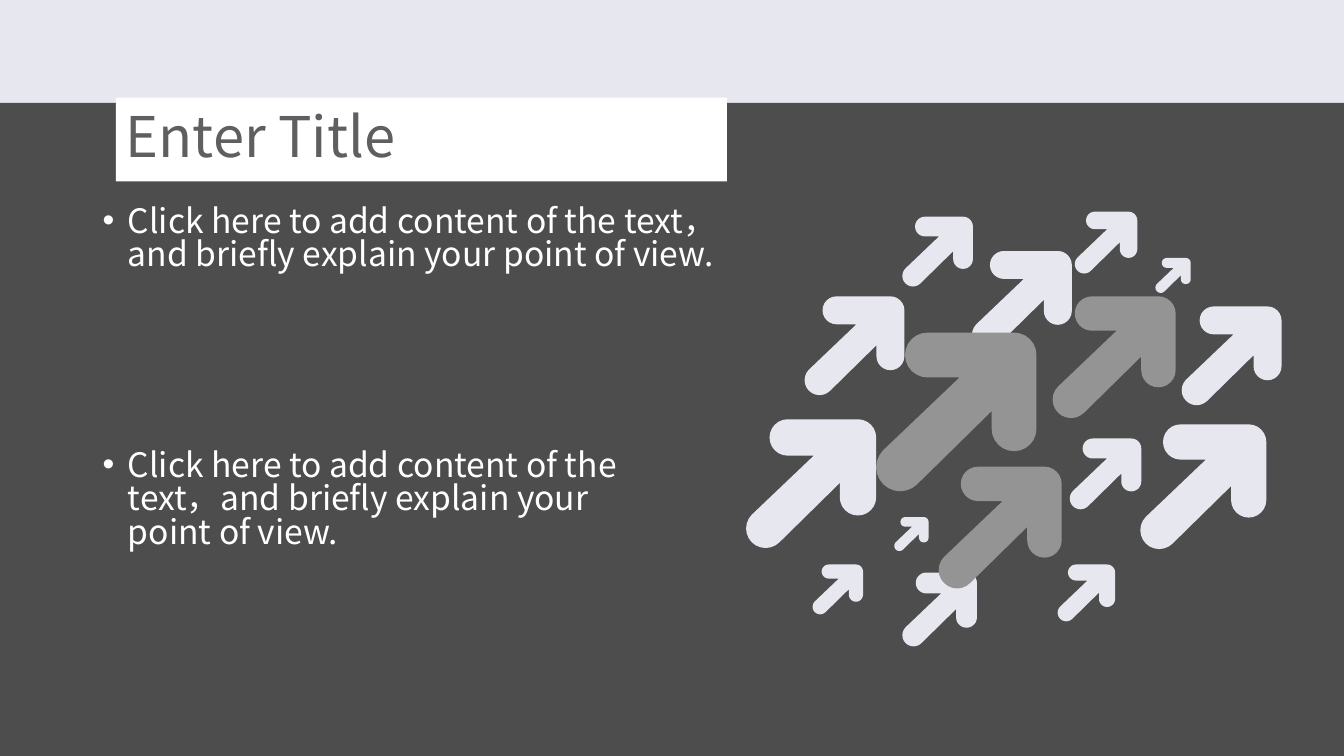
"""Build a title slide with two bullet texts and a cluster of rising arrows."""
from math import cos, radians, sin

from lxml import etree
from pptx import Presentation
from pptx.dml.color import RGBColor
from pptx.enum.shapes import MSO_SHAPE
from pptx.enum.text import MSO_ANCHOR, PP_ALIGN
from pptx.oxml.ns import qn
from pptx.util import Inches, Pt

RECTANGLE = MSO_SHAPE.RECTANGLE
LEFT = PP_ALIGN.LEFT
TOP, MIDDLE = MSO_ANCHOR.TOP, MSO_ANCHOR.MIDDLE

THEME = {
    "font": "Noto Sans CJK JP",
    "pale": "E7E7EF",
    "dark": "4D4D4D",
    "grey": "949494",
    "white": "FFFFFF",
    "title": "5F5F5F",
    "title_size": 40,
    "body_size": 24,
}

SLIDE_SIZE = (13.33, 7.5)
PANEL_BOX = (0, 1.02, 13.33, 6.48)
TITLE = ("Enter Title", (1.15, 0.97, 6.06, 0.83))
BODY_TEXT = "Click here to add content of the text，and briefly explain your point of view."
BODY_BOXES = [(0.92, 2, 6.54, 2.23), (0.92, 4.42, 5.91, 2.17)]

# left, top, width, colour
ARROWS = [
    (8.95, 5.68, 0.74, "pale"),
    (9.64, 2.49, 0.99, "pale"),
    (8.69, 3.3, 1.59, "grey"),
    (10.44, 2.94, 1.22, "grey"),
    (7.98, 2.94, 0.99, "pale"),
    (9.31, 4.63, 1.22, "grey"),
    (7.4, 4.16, 1.29, "pale"),
    (10.61, 4.35, 0.71, "pale"),
    (11.72, 3.04, 0.99, "pale"),
    (10.66, 2.1, 0.62, "pale"),
    (11.46, 2.56, 0.35, "pale"),
    (8.87, 5.13, 0.34, "pale"),
    (8.06, 5.6, 0.5, "pale"),
    (10.49, 5.6, 0.57, "pale"),
    (8.95, 2.15, 0.7, "pale"),
    (11.31, 4.21, 1.25, "pale"),
]


def arc(center_x, center_y, radius, start, end, step=15):
    """Return points along a circular arc, angles in degrees."""
    return [
        (center_x + radius * cos(radians(angle)), center_y + radius * sin(radians(angle)))
        for angle in range(start, end + 1, step)
    ]


ARROW_OUTLINE = [
    *arc(0.32, 0.14, 0.14, 90, 270),
    *arc(0.86, 0.14, 0.14, 270, 360),
    *arc(0.86, 0.6, 0.14, 0, 180),
    (0.72, 0.49),
    *arc(0.15, 0.84, 0.15, 45, 225),
    (0.52, 0.28),
]


def color(name):
    """Return a theme colour."""
    return RGBColor.from_string(THEME[name])


def paint(shape, fill):
    """Give a shape a plain fill without line or shadow."""
    shape.fill.solid()
    shape.fill.fore_color.rgb = color(fill)
    shape.line.fill.background()
    shape.shadow.inherit = False


def add_rectangle(slide, box, fill):
    """Add a filled rectangle."""
    shape = slide.shapes.add_shape(RECTANGLE, *map(Inches, box))
    paint(shape, fill)
    return shape


def add_arrow(slide, left, top, size, fill):
    """Add one rounded arrow scaled from the unit outline."""
    points = [(Inches(left + size * x), Inches(top + size * y)) for x, y in ARROW_OUTLINE]
    builder = slide.shapes.build_freeform(*points[0])
    builder.add_line_segments(points[1:], close=True)
    paint(builder.convert_to_shape(), fill)


def write_text(shape, text, *, size, fill, anchor=TOP, spacing=0.9, bullet=None):
    """Write one formatted paragraph into a shape."""
    frame = shape.text_frame
    frame.word_wrap = True
    frame.vertical_anchor = anchor
    paragraph = frame.paragraphs[0]
    paragraph.alignment = LEFT
    paragraph.line_spacing = spacing
    run = paragraph.add_run()
    run.text = text
    run.font.name = THEME["font"]
    run.font.size = Pt(THEME[size])
    run.font.color.rgb = color(fill)
    latin = run.font._element.find(qn("a:latin"))
    east_asian = etree.Element(qn("a:ea"), typeface=THEME["font"])
    latin.addnext(east_asian)
    if bullet:
        properties = paragraph._p.get_or_add_pPr()
        properties.set("marL", str(Inches(0.25)))
        properties.set("indent", str(-Inches(0.25)))
        etree.SubElement(properties, qn("a:buFont"), typeface="Arial")
        etree.SubElement(properties, qn("a:buChar"), char=bullet)


def main():
    """Build and save the presentation."""
    presentation = Presentation()
    presentation.slide_width, presentation.slide_height = map(Inches, SLIDE_SIZE)
    slide = presentation.slides.add_slide(presentation.slide_layouts[6])
    slide.background.fill.solid()
    slide.background.fill.fore_color.rgb = color("pale")

    add_rectangle(slide, PANEL_BOX, "dark")
    for arrow in ARROWS:
        add_arrow(slide, *arrow)

    title, title_box = TITLE
    title_shape = add_rectangle(slide, title_box, "white")
    write_text(title_shape, title, size="title_size", fill="title", anchor=MIDDLE)
    for box in BODY_BOXES:
        text_box = slide.shapes.add_textbox(*map(Inches, box))
        write_text(text_box, BODY_TEXT, size="body_size", fill="white", spacing=0.83, bullet="•")

    presentation.save("out.pptx")


if __name__ == "__main__":
    main()
